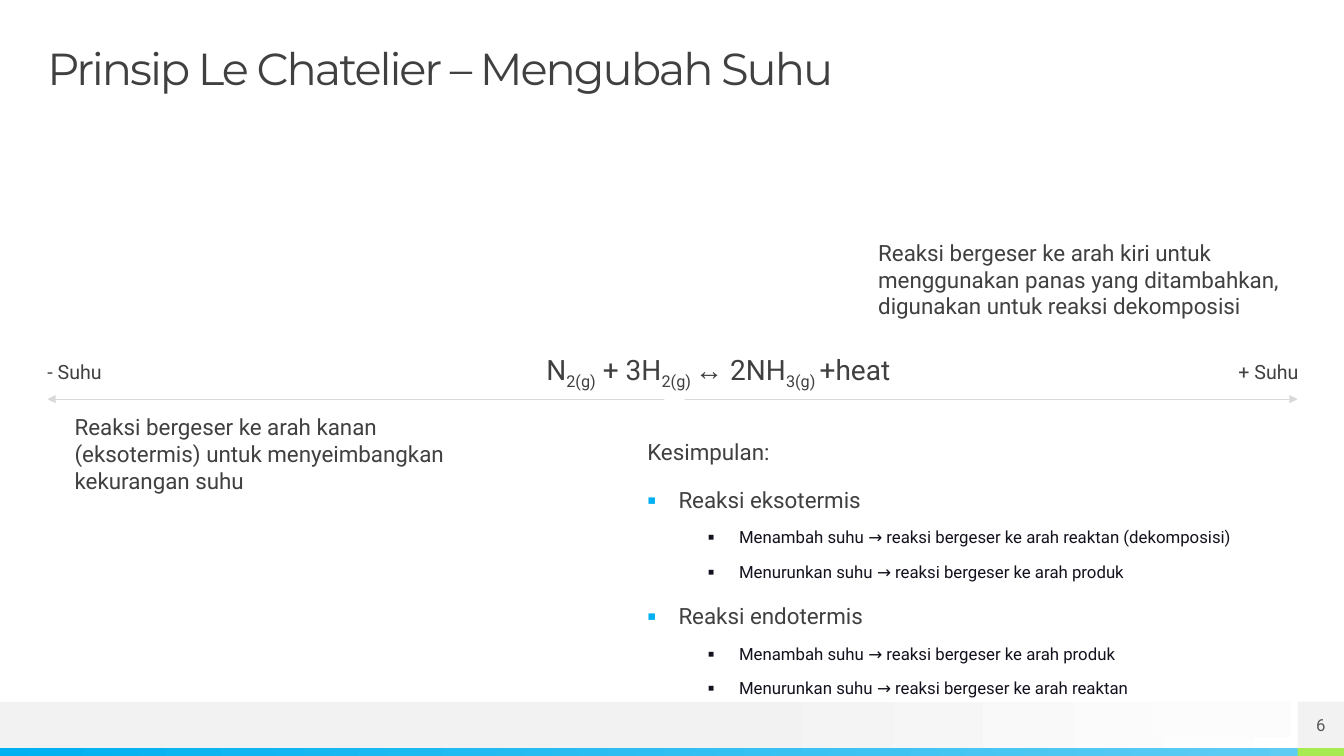
from lxml import etree
from pptx import Presentation
from pptx.dml.color import RGBColor
from pptx.enum.shapes import MSO_CONNECTOR as CONN, MSO_SHAPE as SHAPE
from pptx.enum.text import MSO_ANCHOR as ANCHOR, PP_ALIGN as ALIGN
from pptx.oxml.ns import qn
from pptx.util import Inches, Pt

COLORS = {
    "text": "404040", "detail": "12121E", "number": "595959",
    "white": "FFFFFF", "band": "F2F2F2", "patch": "FCFCFC", "line": "D9D9D9",
    "blue": "00B0F0", "sky": "5ECCF3", "green": "A7EA52",
}


def rgb(name):
    return RGBColor.from_string(COLORS[name])


def add_bullet(p, indent, color):
    pPr = p._p.get_or_add_pPr()
    pPr.set("marL", str(Inches(indent)))
    pPr.set("indent", str(Inches(-0.31)))
    clr = etree.SubElement(pPr, qn("a:buClr"))
    etree.SubElement(clr, qn("a:srgbClr"), val=COLORS[color])
    etree.SubElement(pPr, qn("a:buFont"), typeface="Roboto")
    etree.SubElement(pPr, qn("a:buChar"), char="▪")


def write(p, text, size=16, font="Roboto", color="text", align=ALIGN.LEFT,
          before=10, after=5, spacing=None, tracking=None, level=0,
          indent=None, bullet="blue"):
    """Fill a paragraph; text is a string or a list of (text, font, baseline)."""
    p.alignment, p.level = align, level
    p.space_before, p.space_after = Pt(before), Pt(after)
    if spacing:
        p.line_spacing = spacing
    if indent:
        add_bullet(p, indent, bullet)
    runs = [(text, font, 0)] if isinstance(text, str) else text
    for words, face, baseline in runs:
        r = p.add_run()
        r.text = words
        r.font.size, r.font.name = Pt(size), face
        r.font.color.rgb = rgb(color)
        if baseline:
            r.font._element.set("baseline", str(baseline * 1000))
        if tracking:
            r.font._element.set("spc", str(int(tracking * 100)))


class SlideBuilder:
    def __init__(self, prs):
        self.slide = prs.slides.add_slide(prs.slide_layouts[5])
        self.shapes = self.slide.shapes

    def frame(self, sp, anchor=ANCHOR.TOP):
        tf = sp.text_frame
        tf.word_wrap, tf.vertical_anchor = True, anchor
        tf.margin_left = tf.margin_top = tf.margin_right = tf.margin_bottom = 0
        return tf

    def title(self, box, text, **fmt):
        sp = self.shapes.title
        sp.left, sp.top, sp.width, sp.height = map(Inches, box)
        write(self.frame(sp, ANCHOR.MIDDLE).paragraphs[0], text, **fmt)

    def rect(self, box, *colors, start=0):
        """Add a rectangle; two colours make a left-to-right gradient."""
        sp = self.shapes.add_shape(SHAPE.RECTANGLE, *map(Inches, box))
        sp.shadow.inherit = False
        sp.line.fill.background()
        if len(colors) == 1:
            sp.fill.solid()
            sp.fill.fore_color.rgb = rgb(colors[0])
        else:
            sp.fill.gradient()
            sp.fill.gradient_angle = 0
            for stop, color, pos in zip(sp.fill.gradient_stops, colors, (start, 1)):
                stop.color.rgb = rgb(color)
                stop.position = pos
        return sp

    def text(self, box, *paragraphs):
        """Add a text box; each paragraph is a (text, format) pair."""
        tf = self.frame(self.shapes.add_textbox(*map(Inches, box)))
        for i, (text, fmt) in enumerate(paragraphs):
            write(tf.add_paragraph() if i else tf.paragraphs[0], text, **fmt)

    def double_arrow(self, x1, x2, y):
        line = self.shapes.add_connector(
            CONN.STRAIGHT, Inches(x1), Inches(y), Inches(x2), Inches(y))
        line.line.width = Pt(0.5)
        line.line.color.rgb = rgb("line")
        ln = line.line._get_or_add_ln()
        for end in ("a:headEnd", "a:tailEnd"):
            etree.SubElement(ln, qn(end), type="triangle")
        etree.SubElement(line._element.spPr, qn("a:effectLst"))


def main():
    prs = Presentation()
    prs.slide_width, prs.slide_height = Inches(13.33), Inches(7.5)
    s = SlideBuilder(prs)

    s.rect((0, 6.96, 13.33, 0.46), "band", "white", start=0.53)
    s.rect((0, 7.42, 12.87, 0.08), "blue", "sky")
    s.rect((12.87, 7.42, 0.46, 0.08), "green")
    s.double_arrow(0.47, 12.87, 3.96)

    s.title((0.47, 0.47, 12.4, 0.47), "Prinsip Le Chatelier – Mengubah Suhu",
            size=32, font="Montserrat", spacing=0.9, tracking=-1.5,
            before=0, after=0)
    s.text((0.47, 3.57, 2.17, 0.28), ("- Suhu", dict(size=14)))
    s.text((10.71, 3.57, 2.17, 0.28),
           ("+ Suhu", dict(size=14, align=ALIGN.RIGHT)))

    number = s.rect((12.87, 6.96, 0.46, 0.46), "band")
    write(s.frame(number, ANCHOR.MIDDLE).paragraphs[0], "6", size=12,
          color="number", align=ALIGN.CENTER, before=0, after=0)

    s.rect((6.59, 1.39, 0.2, 5.22), "white")
    equation = [
        ("N", "Roboto", 0), ("2(g)", "Roboto", -25),
        (" + 3H", "Roboto", 0), ("2(g) ", "Roboto", -25),
        ("↔", "Times New Roman", 0),
        (" 2NH", "Roboto", 0), ("3(g) ", "Roboto", -25),
        ("+heat", "Roboto", 0),
    ]
    s.text((5.02, 3.5, 3.81, 0.4), (equation, dict(size=20, align=ALIGN.RIGHT)))

    s.text((8.71, 2.37, 4.28, 1.14),
           ("Reaksi bergeser ke arah kiri untuk menggunakan panas yang "
            "ditambahkan, digunakan untuk reaksi dekomposisi", {}))
    s.text((0.74, 4.1, 4.28, 0.81),
           ("Reaksi bergeser ke arah kanan (eksotermis) untuk "
            "menyeimbangkan kekurangan suhu", {}))

    topic = dict(indent=0.31)
    detail = dict(size=12, color="detail", level=1, before=5,
                  indent=0.91, bullet="detail")
    s.text((6.42, 4.35, 5.86, 2.62),
           ("Kesimpulan:", {}),
           ("Reaksi eksotermis", topic),
           ("Menambah suhu → reaksi bergeser ke arah reaktan (dekomposisi)", detail),
           ("Menurunkan suhu → reaksi bergeser ke arah produk", detail),
           ("Reaksi endotermis", topic),
           ("Menambah suhu → reaksi bergeser ke arah produk", detail),
           ("Menurunkan suhu → reaksi bergeser ke arah reaktan", detail))
    s.rect((11.43, 6.96, 1.37, 0.36), "patch")

    prs.save("out.pptx")


if __name__ == "__main__":
    main()
